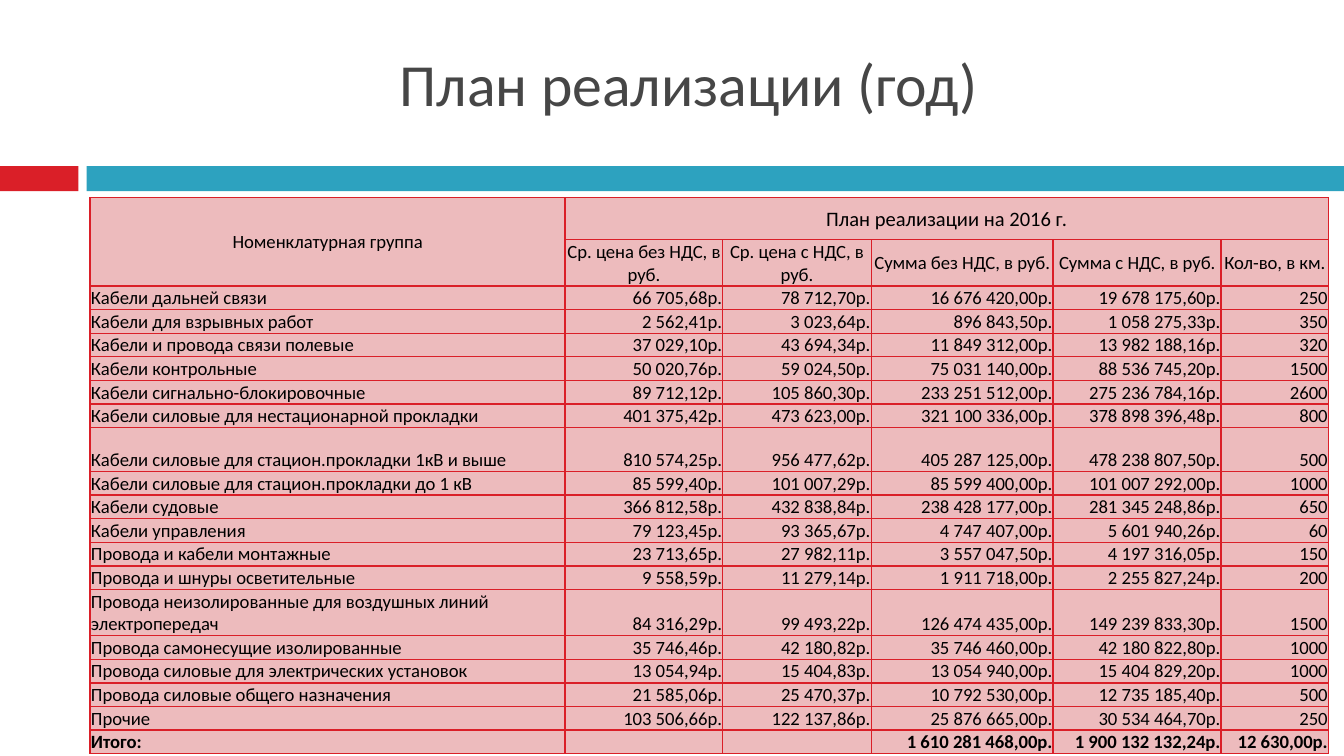
from lxml.etree import SubElement
from pptx import Presentation
from pptx.dml.color import RGBColor
from pptx.enum.shapes import MSO_SHAPE as Shape
from pptx.enum.text import MSO_ANCHOR as Anchor, PP_ALIGN as Align
from pptx.oxml.ns import qn
from pptx.util import Pt

FONT = "Calibri"
RED, TEAL, PINK = "DA1F28", "2DA2BF", "EDBBBD"
BLACK, GREY = "000000", "464646"

COLUMN_WIDTHS = [254.5, 84.5, 79.5, 97.5, 90, 57.5]
ROW_HEIGHT = 12.5
SPECIAL_HEIGHTS = {0: 22.5, 1: 19.5, 8: 23.5, 14: 24.5, 19: 10}

HEADERS = [
    ("Номенклатурная группа", "План реализации на 2016 г.", "", "", "", ""),
    ("", "Ср. цена без НДС, в руб.", "Ср. цена с НДС, в руб.",
     "Сумма без НДС, в руб.", "Сумма с НДС, в руб.", "Кол-во, в км."),
]
PRODUCTS = [
    ("Кабели дальней связи", "66 705,68р.", "78 712,70р.", "16 676 420,00р.", "19 678 175,60р.", "250"),
    ("Кабели для взрывных работ", "2 562,41р.", "3 023,64р.", "896 843,50р.", "1 058 275,33р.", "350"),
    ("Кабели и провода связи полевые", "37 029,10р.", "43 694,34р.", "11 849 312,00р.", "13 982 188,16р.", "320"),
    ("Кабели контрольные", "50 020,76р.", "59 024,50р.", "75 031 140,00р.", "88 536 745,20р.", "1500"),
    ("Кабели сигнально-блокировочные", "89 712,12р.", "105 860,30р.", "233 251 512,00р.", "275 236 784,16р.", "2600"),
    ("Кабели силовые для нестационарной прокладки", "401 375,42р.", "473 623,00р.",
     "321 100 336,00р.", "378 898 396,48р.", "800"),
    ("Кабели силовые для стацион.прокладки 1кВ и выше", "810 574,25р.", "956 477,62р.",
     "405 287 125,00р.", "478 238 807,50р.", "500"),
    ("Кабели силовые для стацион.прокладки до 1 кВ", "85 599,40р.", "101 007,29р.",
     "85 599 400,00р.", "101 007 292,00р.", "1000"),
    ("Кабели судовые", "366 812,58р.", "432 838,84р.", "238 428 177,00р.", "281 345 248,86р.", "650"),
    ("Кабели управления", "79 123,45р.", "93 365,67р.", "4 747 407,00р.", "5 601 940,26р.", "60"),
    ("Провода и кабели монтажные", "23 713,65р.", "27 982,11р.", "3 557 047,50р.", "4 197 316,05р.", "150"),
    ("Провода и шнуры осветительные", "9 558,59р.", "11 279,14р.", "1 911 718,00р.", "2 255 827,24р.", "200"),
    ("Провода неизолированные для воздушных линий электропередач", "84 316,29р.", "99 493,22р.",
     "126 474 435,00р.", "149 239 833,30р.", "1500"),
    ("Провода самонесущие изолированные", "35 746,46р.", "42 180,82р.", "35 746 460,00р.", "42 180 822,80р.", "1000"),
    ("Провода силовые для электрических установок", "13 054,94р.", "15 404,83р.",
     "13 054 940,00р.", "15 404 829,20р.", "1000"),
    ("Провода силовые общего назначения", "21 585,06р.", "25 470,37р.", "10 792 530,00р.", "12 735 185,40р.", "500"),
    ("Прочие", "103 506,66р.", "122 137,86р.", "25 876 665,00р.", "30 534 464,70р.", "250"),
]
TOTAL = ("Итого:", "", "", "1 610 281 468,00р.", "1 900 132 132,24р.", "12 630,00р.")


def color(value):
    return RGBColor.from_string(value)


def write(frame, text, size=10, fill=BLACK, bold=False, align=Align.LEFT):
    paragraph = frame.paragraphs[0]
    paragraph.alignment = align
    if not text:
        # Keeps an empty cell as low as its row
        SubElement(paragraph._p, qn("a:endParaRPr"), sz=str(size * 100))
        return
    run = paragraph.add_run()
    run.text = text
    run.font.name = FONT
    run.font.size = Pt(size)
    run.font.bold = bold
    run.font.color.rgb = color(fill)


def add_borders(cell, line_color, width):
    properties = cell._tc.get_or_add_tcPr()
    for position, side in enumerate(("a:lnL", "a:lnR", "a:lnT", "a:lnB")):
        line = SubElement(properties, qn(side), w=str(Pt(width)))
        fill = SubElement(line, qn("a:solidFill"))
        SubElement(fill, qn("a:srgbClr"), val=line_color)
        properties.insert(position, line)


def place_title(slide, left, top, width, height):
    title = slide.shapes.title
    title.left, title.top = Pt(left), Pt(top)
    title.width, title.height = Pt(width), Pt(height)
    title.text_frame.vertical_anchor = Anchor.BOTTOM
    write(title.text_frame, "План реализации (год)", size=32, fill=GREY, align=Align.CENTER)


def add_divider(slide, left, top, width, height):
    accent_width, gap = 42, 4.5
    band_left = left + accent_width + gap
    bars = [(left, accent_width, RED), (band_left, left + width - band_left, TEAL)]
    for bar_left, bar_width, fill in bars:
        bar = slide.shapes.add_shape(Shape.RECTANGLE, Pt(bar_left), Pt(top), Pt(bar_width), Pt(height))
        bar.shadow.inherit = False
        bar.fill.solid()
        bar.fill.fore_color.rgb = color(fill)
        bar.line.fill.background()


def add_plan_table(slide, left, top, width, height):
    rows = HEADERS + PRODUCTS + [TOTAL]
    table = slide.shapes.add_table(
        len(rows), len(COLUMN_WIDTHS), Pt(left), Pt(top), Pt(width), Pt(height)).table
    for column, column_width in zip(table.columns, COLUMN_WIDTHS):
        column.width = Pt(column_width)
    for row_index, values in enumerate(rows):
        table.rows[row_index].height = Pt(SPECIAL_HEIGHTS.get(row_index, ROW_HEIGHT))
        is_header = row_index < len(HEADERS)
        for column_index, text in enumerate(values):
            cell = table.cell(row_index, column_index)
            cell.margin_left = cell.margin_right = cell.margin_top = Pt(0.5)
            cell.margin_bottom = 0
            cell.vertical_anchor = Anchor.MIDDLE if is_header else Anchor.BOTTOM
            cell.fill.solid()
            cell.fill.fore_color.rgb = color(PINK)
            add_borders(cell, RED, 0.79)
            if is_header:
                align = Align.CENTER
            else:
                align = Align.RIGHT if column_index else Align.LEFT
            write(cell.text_frame, text, size=11 if (row_index, column_index) == (0, 1) else 10,
                  bold=values is TOTAL, align=align)
    # Header spans
    table.cell(0, 0).merge(table.cell(1, 0))
    table.cell(0, 1).merge(table.cell(0, len(COLUMN_WIDTHS) - 1))


def main():
    presentation = Presentation()
    presentation.slide_width, presentation.slide_height = Pt(720), Pt(405)
    slide = presentation.slides.add_slide(presentation.slide_layouts[5])
    add_divider(slide, 0, 89, 720, 13.5)
    place_title(slide, 48, 21, 642, 46)
    add_plan_table(slide, 48.25, 106, 663.5, 294)
    presentation.save("out.pptx")


if __name__ == "__main__":
    main()
